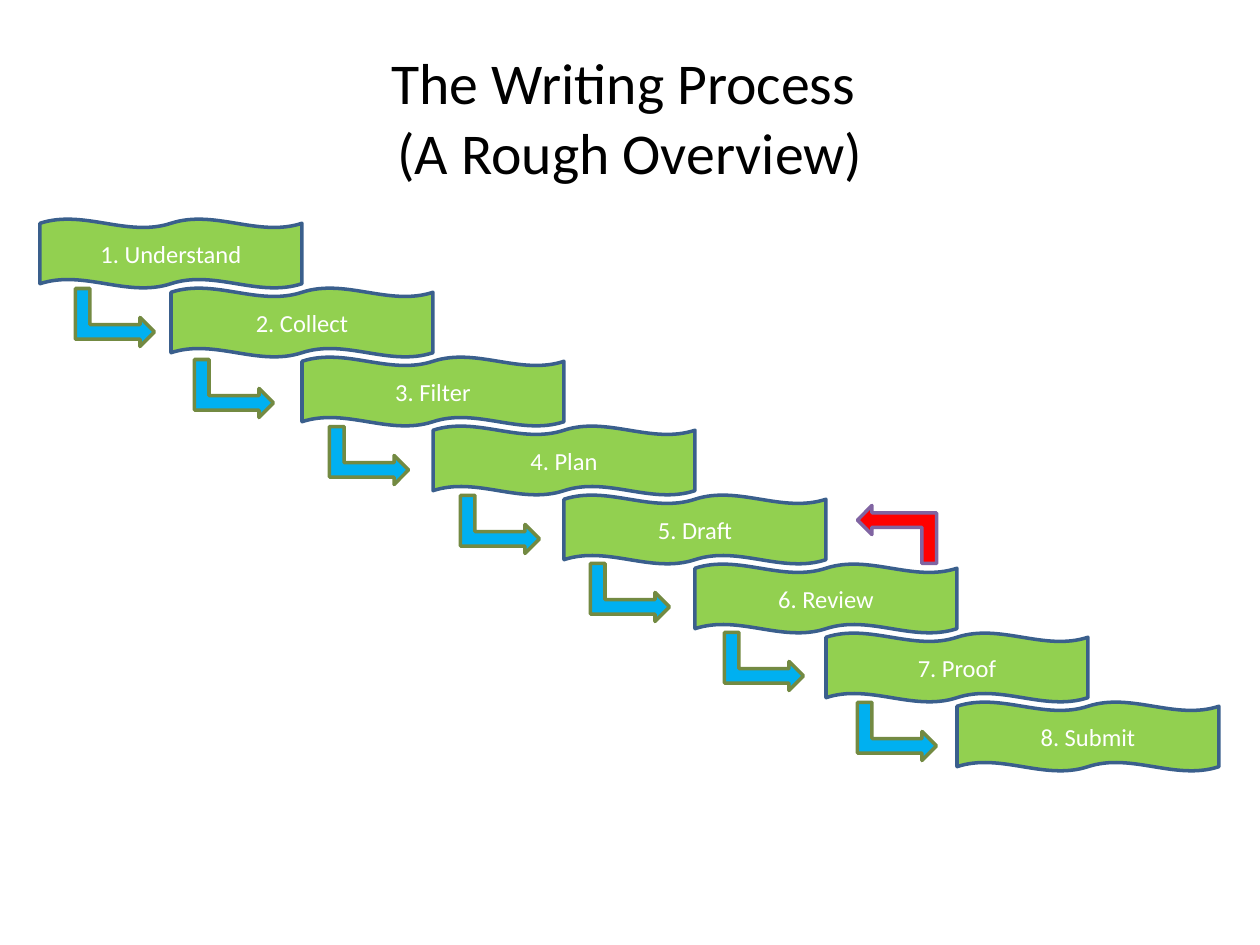
"""Build a slide showing the writing process as a descending staircase of steps."""
import pptx
import pptx.dml.color
import pptx.enum.shapes
import pptx.enum.text
import pptx.util

PX = 914400 // 126
BLACK = pptx.dml.color.RGBColor(0x00, 0x00, 0x00)
WHITE = pptx.dml.color.RGBColor(0xFF, 0xFF, 0xFF)
GREEN = pptx.dml.color.RGBColor(0x92, 0xD0, 0x50)
NAVY = pptx.dml.color.RGBColor(0x3A, 0x5F, 0x8C)
BLUE = pptx.dml.color.RGBColor(0x00, 0xB0, 0xF0)
OLIVE = pptx.dml.color.RGBColor(0x73, 0x8A, 0x42)
RED = pptx.dml.color.RGBColor(0xFF, 0x00, 0x00)
PURPLE = pptx.dml.color.RGBColor(0x80, 0x64, 0xA2)
SHAPE = pptx.enum.shapes.MSO_SHAPE


def add_shape(parent, kind, left, top, width, height, fill, line):
    shape = parent.shapes.add_shape(kind, left * PX, top * PX, width * PX, height * PX)
    shape.shadow.inherit = False
    shape.fill.solid()
    shape.fill.fore_color.rgb = fill
    shape.line.color.rgb = line
    shape.line.width = pptx.util.Pt(2)
    return shape


def write_text(shape, text, size, color):
    frame = shape.text_frame
    frame.word_wrap = True
    frame.vertical_anchor = pptx.enum.text.MSO_ANCHOR.MIDDLE
    frame.text = text
    para = frame.paragraphs[0]
    para.alignment = pptx.enum.text.PP_ALIGN.CENTER
    for span in para.runs:
        span.font.name = "Calibri"
        span.font.size = pptx.util.Pt(size)
        span.font.color.rgb = color


deck = pptx.Presentation()
deck.slide_width = pptx.util.Inches(10)
deck.slide_height = pptx.util.Inches(7.5)
page = deck.slides.add_slide(deck.slide_layouts[6])

title = page.shapes.add_textbox(63 * PX, 38 * PX, 1134 * PX, 157 * PX)
write_text(title, "The Writing Process \v(A Rough Overview)", 33, BLACK)

staircase = page.shapes.add_group_shape()
steps = ["Understand", "Collect", "Filter", "Plan", "Draft", "Review", "Proof", "Submit"]
for index, step in enumerate(steps):
    wave = add_shape(staircase, SHAPE.DOUBLE_WAVE, 40 + 131 * index, 219 + 69 * index,
                     262, 69, GREEN, NAVY)
    write_text(wave, f"{index + 1}. {step}", 14, WHITE)

forward_places = [(86, 278), (205, 349), (340, 416), (471, 485),
                  (601, 553), (735, 622), (868, 692)]
arrows = [(left, top, 90, BLUE, OLIVE) for left, top in forward_places]
arrows.append((868, 495, 270, RED, PURPLE))
for left, top, rotation, fill, line in arrows:
    arrow = add_shape(staircase, SHAPE.BENT_UP_ARROW, left, top, 58, 79, fill, line)
    arrow.rotation = rotation

deck.save("out.pptx")
